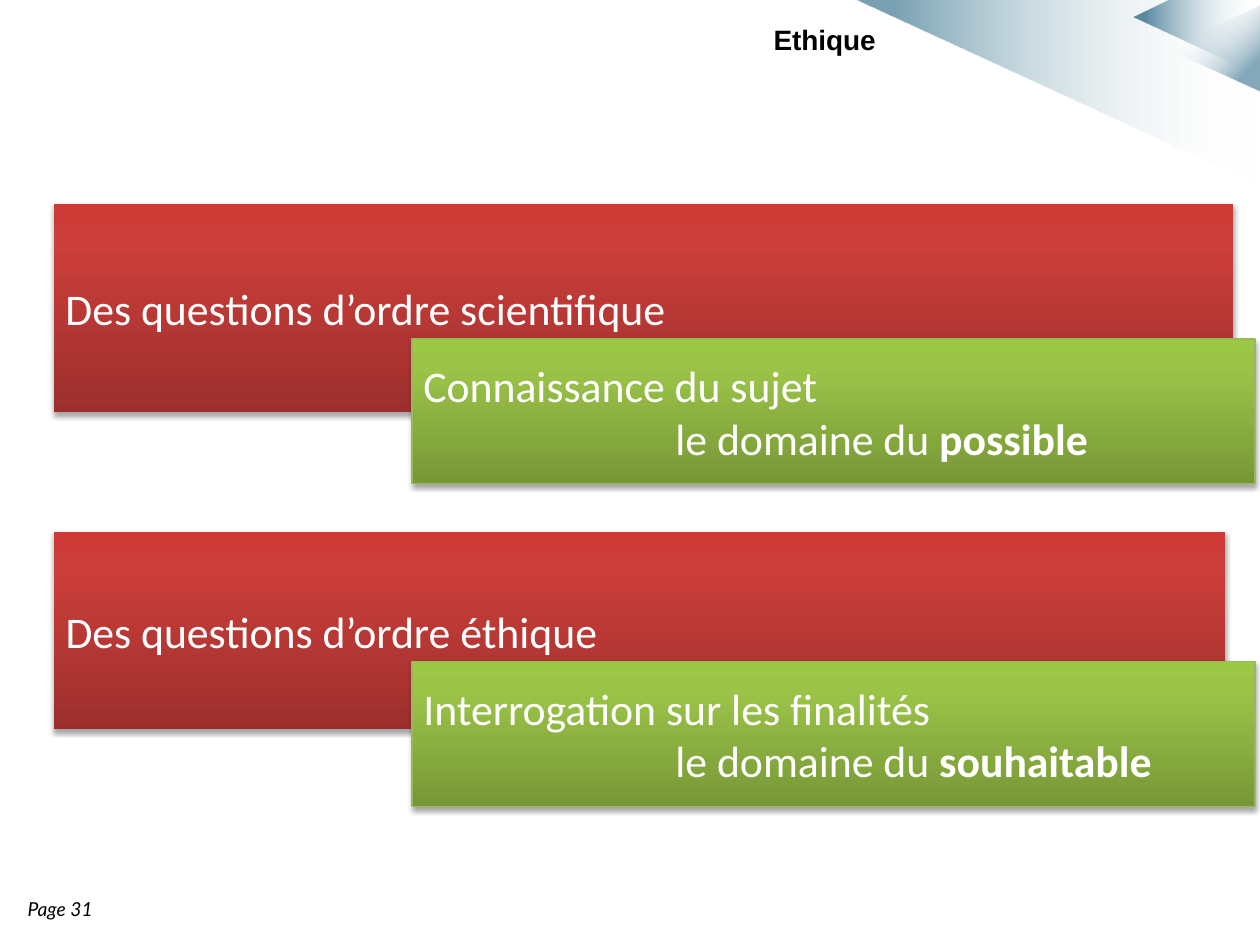
from lxml.etree import SubElement
from pptx import Presentation
from pptx.dml.color import RGBColor
from pptx.enum.shapes import MSO_SHAPE as Shape
from pptx.enum.text import MSO_ANCHOR as Anchor, PP_ALIGN as Align
from pptx.oxml.ns import qn
from pptx.util import Inches, Pt

WIDTH, HEIGHT = 10, 7.5
LEFT = 0.43
WHITE, BLACK, BLUE = "FFFFFF", "000000", "004D6F"
RED_STOPS = [(0, "9C2F2D", 100), (80, "CB3E3A", 100), (100, "CE3B37", 100)]
GREEN_STOPS = [(0, "779737", 100), (80, "9BC348", 100), (100, "9DC746", 100)]
GREEN_LINE = "98B955"

QUESTIONS = [
    {"question": "Des questions d’ordre scientifique", "band": (1.62, 9.36, 1.65),
     "answer": "Connaissance du sujet", "answer_top": 2.69, "domain": "possible"},
    {"question": "Des questions d’ordre éthique", "band": (4.22, 9.29, 1.57),
     "answer": "Interrogation sur les finalités", "answer_top": 5.25, "domain": "souhaitable"},
]
ANSWER_LEFT, ANSWER_WIDTH, ANSWER_HEIGHT = 3.27, 6.69, 1.15
DOMAIN_INDENT = 2

RIBBONS = [
    ([(6.79, 0), (WIDTH, 0), (WIDTH, 1.47)], 53),
    ([(9, 0.14), (9.29, 0), (WIDTH, 0), (WIDTH, 0.6)], 63),
]


def color(value):
    return RGBColor.from_string(value)


def add_color(parent, value, alpha):
    tint = SubElement(parent, qn("a:srgbClr"), val=value)
    if alpha < 100:
        SubElement(tint, qn("a:alpha"), val=str(alpha * 1000))


def fill_gradient(shape, stops, angle):
    shape.fill.gradient()
    gradient = shape.element.spPr.find(qn("a:gradFill"))
    for child in list(gradient):
        gradient.remove(child)
    gradient.set("rotWithShape", "1")
    stop_list = SubElement(gradient, qn("a:gsLst"))
    for position, value, alpha in stops:
        stop = SubElement(stop_list, qn("a:gs"), pos=str(position * 1000))
        add_color(stop, value, alpha)
    SubElement(gradient, qn("a:lin"), ang=str(angle * 60000), scaled="0")


def decorate(shape, stops, angle):
    fill_gradient(shape, stops, angle)
    shape.line.fill.background()
    shape.shadow.inherit = False


def style(paragraph, font, size, value, align=Align.LEFT):
    paragraph.alignment = align
    paragraph.font.name = font
    paragraph.font.size = Pt(size)
    paragraph.font.color.rgb = color(value)


def add_band(slide, box, stops, text):
    band = slide.shapes.add_shape(Shape.RECTANGLE, *map(Inches, box))
    decorate(band, stops, 270)
    effects = band.element.spPr.find(qn("a:effectLst"))
    shadow = SubElement(effects, qn("a:outerShdw"), blurRad=str(Pt(3.1)),
                        dist=str(Pt(1.8)), dir="5400000", rotWithShape="0")
    add_color(shadow, BLACK, 35)
    frame = band.text_frame
    frame.word_wrap = True
    frame.vertical_anchor = Anchor.MIDDLE
    frame.margin_left = frame.margin_right = Inches(0.09)
    frame.paragraphs[0].text = text
    style(frame.paragraphs[0], "Calibri", 25, WHITE, Align.JUSTIFY)
    return band


def add_answer(slide, item):
    box = (ANSWER_LEFT, item["answer_top"], ANSWER_WIDTH, ANSWER_HEIGHT)
    answer = add_band(slide, box, GREEN_STOPS, item["answer"])
    answer.line.color.rgb = color(GREEN_LINE)
    answer.line.width = Pt(0.75)
    domain = answer.text_frame.add_paragraph()
    style(domain, "Calibri", 25, WHITE, Align.JUSTIFY)
    domain._p.get_or_add_pPr().set("marL", str(Inches(DOMAIN_INDENT)))
    domain.add_run().text = "le domaine du "
    keyword = domain.add_run()
    keyword.text = item["domain"]
    keyword.font.bold = True


def add_label(slide, box, text, font, size, align=Align.LEFT):
    frame = slide.shapes.add_textbox(*map(Inches, box)).text_frame
    frame.word_wrap = True
    label = frame.paragraphs[0]
    label.text = text
    style(label, font, size, BLACK, align)
    return label


def add_corner(slide):
    for points, alpha in RIBBONS:
        start, *others = [(Inches(x), Inches(y)) for x, y in points]
        builder = slide.shapes.build_freeform(*start)
        builder.add_line_segments(others)
        decorate(builder.convert_to_shape(), [(1, WHITE, 0), (91, BLUE, alpha)], 180)
    tip = slide.shapes.add_shape(Shape.ISOSCELES_TRIANGLE, *map(Inches, (9.29, 0.01, 0.68, 0.75)))
    tip.rotation = 270
    decorate(tip, [(27, WHITE, 0), (81, BLUE, 48)], 135)


def main():
    deck = Presentation()
    deck.slide_width, deck.slide_height = Inches(WIDTH), Inches(HEIGHT)
    slide = deck.slides.add_slide(deck.slide_layouts[6])
    add_corner(slide)
    page = add_label(slide, (0.12, 7.07, 2.68, 0.29), "Page 31", "Lato", 11)
    page.font.italic = True
    for item in QUESTIONS:
        top, width, height = item["band"]
        add_band(slide, (LEFT, top, width, height), RED_STOPS, item["question"])
        add_answer(slide, item)
    title = add_label(slide, (2.01, 0.13, 5.04, 0.46), "Ethique", "Arial", 16, Align.RIGHT)
    title.font.bold = True
    title.space_before = Pt(3)
    deck.save("out.pptx")


if __name__ == "__main__":
    main()
